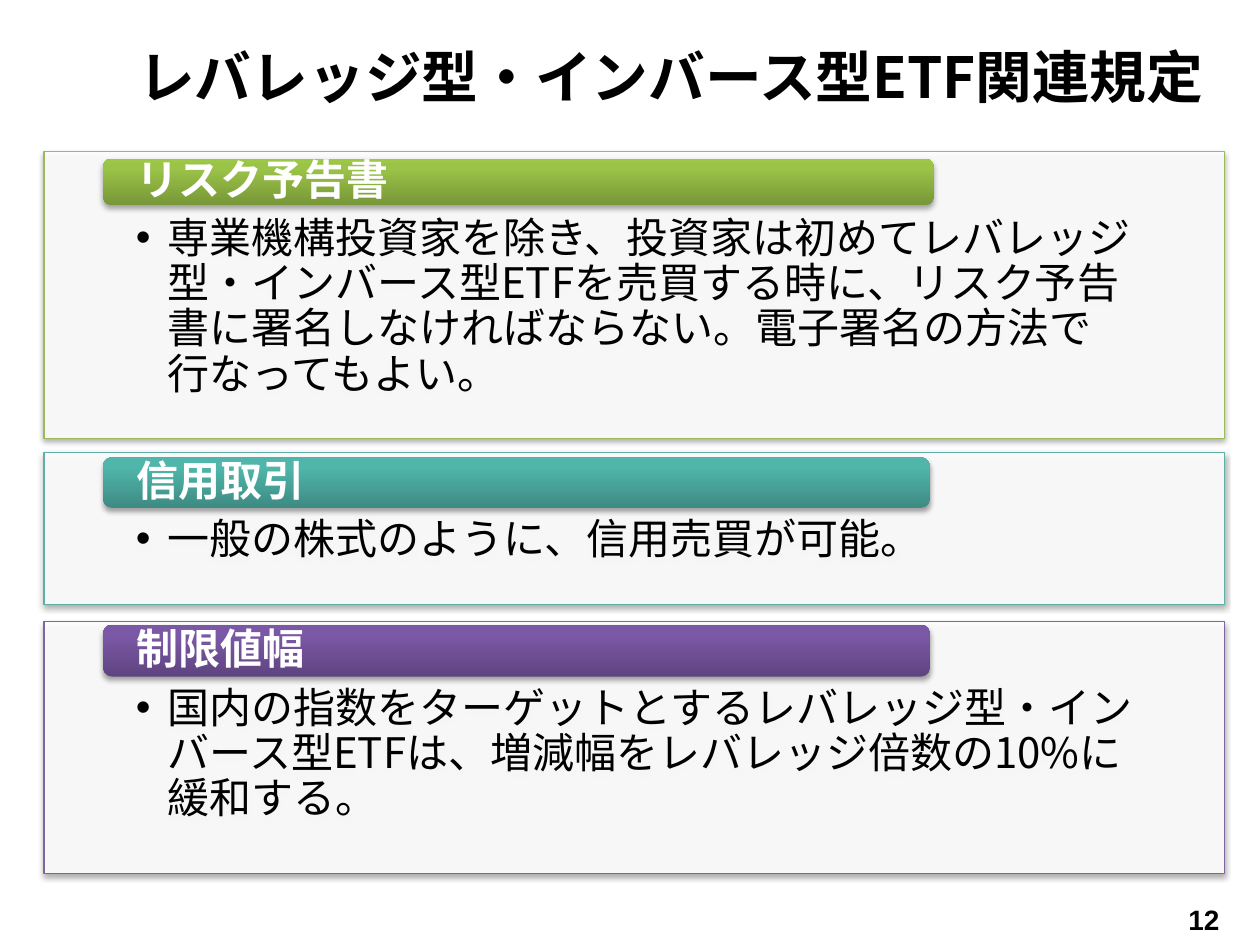
from pptx import Presentation
from pptx.dml.color import RGBColor as RGB
from pptx.enum.shapes import MSO_SHAPE as Kind
from pptx.enum.text import MSO_ANCHOR as Anchor, PP_ALIGN as Align
from pptx.oxml import parse_xml
from pptx.oxml.ns import nsdecls, qn
from pptx.util import Pt

SANS = "Noto Sans CJK JP"
BLACK = RGB(0, 0, 0)
WHITE = RGB(255, 255, 255)
GREEN = RGB(0x9B, 0xBB, 0x59)
TEAL = RGB(0x5E, 0xAF, 0xA6)
PURPLE = RGB(0x80, 0x64, 0xA2)
GREENS = RGB(0x77, 0x97, 0x37), RGB(0x9B, 0xC3, 0x48), RGB(0x9D, 0xC7, 0x46)
TEALS = RGB(0x3D, 0x8B, 0x83), RGB(0x50, 0xB5, 0xAA), RGB(0x4E, 0xB8, 0xAC)
PURPLES = RGB(0x5F, 0x44, 0x80), RGB(0x7B, 0x58, 0xA6), RGB(0x7C, 0x57, 0xA8)

CARDS = [
    (86.4, 164.2, 4.3, 474.5, 26.6, GREEN, GREENS, "リスク予告書",
     "専業機構投資家を除き、投資家は初めてレバレッジ型・インバース型ETFを売買する時に、"
     "リスク予告書に署名しなければならない。電子署名の方法で行なってもよい。"),
    (258.5, 87.1, 2.9, 472.3, 28.8, TEAL, TEALS, "信用取引",
     "一般の株式のように、信用売買が可能。"),
    (355, 144, 2.1, 472.3, 29.5, PURPLE, PURPLES, "制限値幅",
     "国内の指数をターゲットとするレバレッジ型・インバース型ETFは、"
     "増減幅をレバレッジ倍数の10%に緩和する。"),
]


def node(tag, inner="", **attrs):
    """Build one drawing element."""
    text = "".join(f' {key}="{val}"' for key, val in attrs.items())
    return parse_xml(f"<a:{tag} {nsdecls('a')}{text}>{inner}</a:{tag}>")


def write(shape, text, size, color, bold=False, font=SANS, align=Align.LEFT,
          anchor=Anchor.MIDDLE, pads=(7.2, 3.6, 7.2, 3.6)):
    """Put one run of text in a shape and return its paragraph."""
    frame = shape.text_frame
    frame.word_wrap = True
    frame.vertical_anchor = anchor
    (frame.margin_left, frame.margin_top,
     frame.margin_right, frame.margin_bottom) = map(Pt, pads)
    para = frame.paragraphs[0]
    para.alignment = align
    run = para.add_run()
    run.text = text
    run.font.size = Pt(size)
    run.font.bold = bold
    run.font.color.rgb = color
    run.font.name = font
    run.font._element.append(node("ea", typeface=font))
    return para


def cast(shape):
    """Give a shape a soft shadow below it."""
    shape.shadow.inherit = False
    glow = node("outerShdw", '<a:srgbClr val="000000"><a:alpha val="35000"/></a:srgbClr>',
                blurRad=Pt(3.1), dist=Pt(1.8), dir=5400000, rotWithShape=0)
    shape._element.spPr.find(qn("a:effectLst")).append(glow)


def panel(slide, left, top, width, height, line, text):
    """Draw a framed panel with one bulleted paragraph."""
    box = slide.shapes.add_shape(Kind.RECTANGLE, Pt(left), Pt(top), Pt(width), Pt(height))
    box.fill.solid()
    box.fill.fore_color.rgb = WHITE
    tint = box._element.spPr.find(qn("a:solidFill"))[0]
    tint.append(node("alpha", val=90000))
    box.line.color.rgb = line
    box.line.width = Pt(0.75)
    cast(box)
    para = write(box, text, 24, BLACK, anchor=Anchor.TOP, pads=(52.4, 37.5, 52.4, 13.6))
    props = para._p.get_or_add_pPr()
    props.set("marL", str(Pt(18)))
    props.set("indent", str(Pt(-18)))
    props.append(node("buFont", typeface="Arial"))
    props.append(node("buChar", char="•"))
    para.line_spacing = 0.9


def banner(slide, left, top, width, height, shades, text):
    """Draw a rounded heading bar shaded from bottom to top."""
    bar = slide.shapes.add_shape(Kind.ROUNDED_RECTANGLE, Pt(left), Pt(top),
                                 Pt(width), Pt(height))
    stops = "".join(f'<a:gs pos="{pos}"><a:srgbClr val="{shade}"/></a:gs>'
                    for pos, shade in zip((0, 80000, 100000), shades))
    grad = node("gradFill", f'<a:gsLst>{stops}</a:gsLst><a:lin ang="16200000" scaled="0"/>',
                rotWithShape=1)
    bar._element.spPr.find(qn("a:prstGeom")).addnext(grad)
    bar.line.fill.background()
    cast(bar)
    write(bar, text, 24, WHITE, True, pads=(17.7, 0, 17.7, 0)).line_spacing = 0.9


def card(slide, left, top, width, height, drop, span, tall, line, shades, head, body):
    """Place a panel and the heading bar on it."""
    panel(slide, left, top, width, height, line, body)
    banner(slide, left + 33.8, top + drop, span, tall, shades, head)


def label(slide, left, top, width, height, text, size, font):
    """Place a bold centred line of text."""
    box = slide.shapes.add_textbox(Pt(left), Pt(top), Pt(width), Pt(height))
    write(box, text, size, BLACK, True, font, Align.CENTER)


def main():
    """Build and save the slide."""
    deck = Presentation()
    deck.slide_width, deck.slide_height = Pt(720), Pt(540)
    slide = deck.slides.add_slide(deck.slide_layouts[6])
    for top, height, *rest in CARDS:
        card(slide, 25.2, top, 674.6, height, *rest)
    label(slide, 59.8, 15.1, 646.6, 56.9, "レバレッジ型・インバース型ETF関連規定", 32.4, SANS)
    label(slide, 604.1, 511.2, 167.8, 28.8, "12", 16, "Arial")
    deck.save("out.pptx")


if __name__ == "__main__":
    main()
